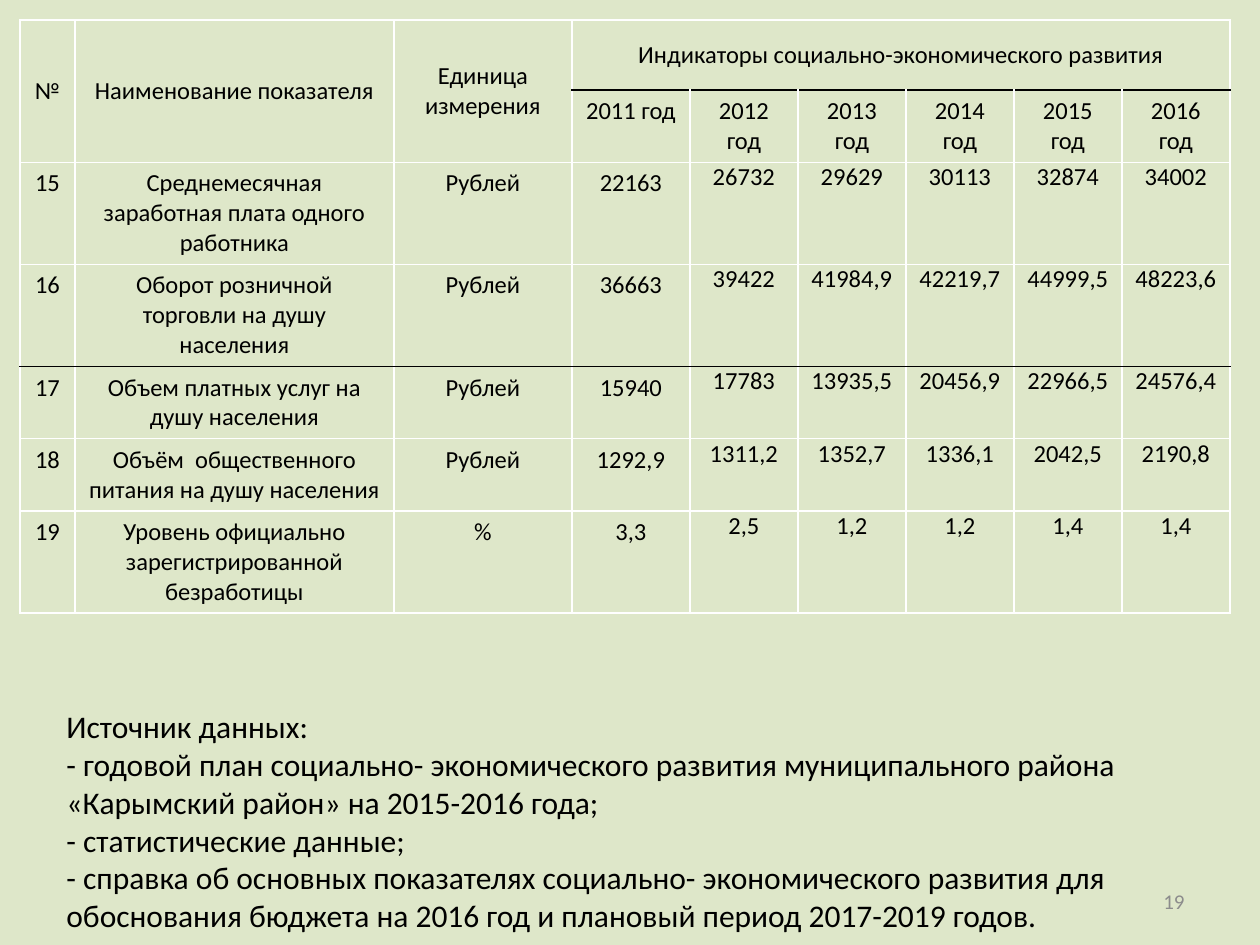
import pptx
import pptx.dml.color
import pptx.enum.text
import pptx.oxml
import pptx.oxml.ns
import pptx.util

EMU_PER_PX = 914400 / 126
ALIGN = pptx.enum.text.PP_ALIGN
ANCHOR = pptx.enum.text.MSO_ANCHOR

COLUMN_WIDTHS = [55, 319, 178, 118] + [108] * 5
ROW_HEIGHTS = [70, 72, 102, 102, 72, 72, 102]
HEADINGS = ["№", "Наименование показателя", "Единица измерения",
            "Индикаторы социально-экономического развития"]
YEARS = [f"{year} год" for year in range(2011, 2017)]
INDICATORS = [
    ["15", "Среднемесячная заработная плата одного работника", "Рублей",
     "22163", "26732", "29629", "30113", "32874", "34002"],
    ["16", "Оборот розничной торговли на душу населения", "Рублей",
     "36663", "39422", "41984,9", "42219,7", "44999,5", "48223,6"],
    ["17", "Объем платных услуг на душу населения", "Рублей",
     "15940", "17783", "13935,5", "20456,9", "22966,5", "24576,4"],
    ["18", "Объём  общественного питания на душу населения", "Рублей",
     "1292,9", "1311,2", "1352,7", "1336,1", "2042,5", "2190,8"],
    ["19", "Уровень официально зарегистрированной безработицы", "%",
     "3,3", "2,5", "1,2", "1,2", "1,4", "1,4"],
]
SOURCES = [
    "Источник данных:",
    "- годовой план социально- экономического развития муниципального района "
    "«Карымский район» на 2015-2016 года;",
    "- статистические данные;",
    "- справка об основных показателях социально- экономического развития для "
    "обоснования бюджета на 2016 год и плановый период 2017-2019 годов.",
]


def px(length):
    """Turn px into EMU."""
    return pptx.util.Emu(round(length * EMU_PER_PX))


def color(value):
    """Turn a hex string into a colour."""
    return pptx.dml.color.RGBColor.from_string(value)


def write(frame, lines, size, ink, align):
    """Fill a text frame with one paragraph per line."""
    frame.word_wrap = True
    for index, line in enumerate(lines):
        para = frame.add_paragraph() if index else frame.paragraphs[0]
        para.alignment = align
        span = para.add_run()
        span.text = line
        span.font.name = "Calibri"
        span.font.size = pptx.util.Pt(size)
        span.font.color.rgb = color(ink)


def set_borders(cell, top, bottom):
    """Draw the four borders of a cell, white at the sides."""
    properties = cell._tc.get_or_add_tcPr()
    sides = [("L", "FFFFFF"), ("R", "FFFFFF"), ("T", top), ("B", bottom)]
    for index, (side, ink) in enumerate(sides):
        line = pptx.oxml.parse_xml(
            f'<a:ln{side} {pptx.oxml.ns.nsdecls("a")} w="12700"><a:solidFill>'
            f'<a:srgbClr val="{ink}"/></a:solidFill></a:ln{side}>')
        properties.insert(index, line)


def add_indicator_table(page, box):
    """Place the table of indicators in the box."""
    table = page.shapes.add_table(
        len(ROW_HEIGHTS), len(COLUMN_WIDTHS), *map(px, box)).table
    table.first_row = table.horz_banding = False
    for column, width in zip(table.columns, COLUMN_WIDTHS):
        column.width = px(width)
    for row, height in zip(table.rows, ROW_HEIGHTS):
        row.height = px(height)

    for column in range(3):
        table.cell(0, column).merge(table.cell(1, column))
    table.cell(0, 3).merge(table.cell(0, 8))

    rows = [HEADINGS + [""] * 5, [""] * 3 + YEARS] + INDICATORS
    for row, texts in enumerate(rows):
        for column, text in enumerate(texts):
            cell = table.cell(row, column)
            cell.fill.background()
            under_title = column >= 3
            top = "000000" if row == 4 or row == 1 and under_title else "FFFFFF"
            bottom = "000000" if row == 3 or row == 0 and under_title else "FFFFFF"
            set_borders(cell, top, bottom)
            if text:
                write(cell.text_frame, [text], 14, "000000", ALIGN.CENTER)
            if row == 0:
                cell.vertical_anchor = ANCHOR.MIDDLE
            if row >= 2 and column >= 4:
                cell.margin_left = cell.margin_right = px(9)
                cell.margin_top = cell.margin_bottom = 0


def add_text(page, box, lines, size, ink, align, anchor):
    """Place a wrapped text box and return its frame."""
    frame = page.shapes.add_textbox(*map(px, box)).text_frame
    frame.vertical_anchor = anchor
    write(frame, lines, size, ink, align)
    return frame


def add_page_number(page, box):
    """Place the page number in the box."""
    add_text(page, box, ["19"], 12, "8C8C8C", ALIGN.RIGHT, ANCHOR.MIDDLE)


def add_sources(page, box):
    """Place the list of data sources in the box."""
    frame = add_text(page, box, SOURCES, 18, "000000", ALIGN.LEFT, ANCHOR.TOP)
    frame.auto_size = pptx.enum.text.MSO_AUTO_SIZE.SHAPE_TO_FIT_TEXT


def main():
    """Build the slide and save the deck."""
    deck = pptx.Presentation()
    deck.slide_width, deck.slide_height = px(1260), px(945)
    page = deck.slides.add_slide(deck.slide_layouts[6])
    page.background.fill.solid()
    page.background.fill.fore_color.rgb = color("DEE7C9")
    add_indicator_table(page, (20, 20, sum(COLUMN_WIDTHS), sum(ROW_HEIGHTS)))
    add_page_number(page, (903, 876, 294, 50))
    add_sources(page, (54, 701, 1181, 242))
    deck.save("out.pptx")


if __name__ == "__main__":
    main()
